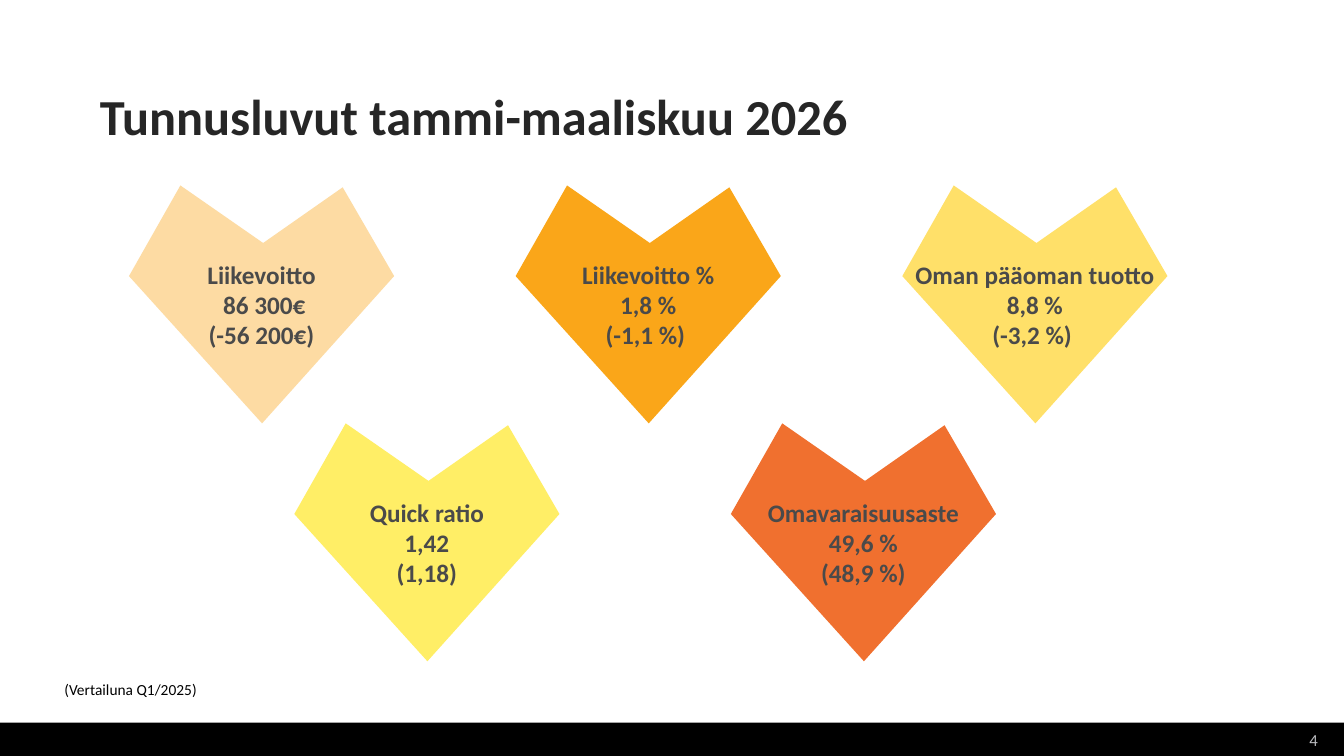
from dataclasses import dataclass

from pptx import Presentation
from pptx import util as u
from pptx.dml.color import RGBColor
from pptx.enum import shapes, text


@dataclass(frozen=True)
class Theme:
    font: str = "Calibri"
    heading: str = "262626"
    figure: str = "4A4A4A"
    note: str = "000000"
    number: str = "BCBDC0"
    bar: str = "000000"
    peach: str = "FDDBA3"
    orange: str = "FAA619"
    gold: str = "FFE069"
    yellow: str = "FFEE66"
    red: str = "F0702F"
    heading_size: int = 36
    figure_size: int = 18
    number_size: int = 12
    note_size: int = 11


# Heart corners, in percent of the heart's width and height
HEART = [(19.4, 0), (0, 38.1), (50.2, 100), (100, 38.1), (80.6, 0.8), (50.6, 24.2)]
HEART_W, HEART_H = 19.73, 31.47


class KeyFigureSlide:
    """Places elements by percent of the slide's width and height."""

    def __init__(self, deck, theme):
        self.theme = theme
        self.width, self.height = deck.slide_width, deck.slide_height
        self.slide = deck.slides.add_slide(deck.slide_layouts[5])

    def x(self, share):
        return round(self.width * share / 100)

    def y(self, share):
        return round(self.height * share / 100)

    def box(self, left, top, width, height):
        return self.x(left), self.y(top), self.x(width), self.y(height)

    def paint(self, shape, color):
        shape.shadow.inherit = False
        shape.fill.solid()
        shape.fill.fore_color.rgb = RGBColor.from_string(color)
        shape.line.fill.background()

    def set_words(self, shape, words, size, color, bold=False,
                  align=text.PP_ALIGN.LEFT, anchor=text.MSO_ANCHOR.MIDDLE, wrap=True):
        frame = shape.text_frame
        frame.text = words
        frame.word_wrap = wrap
        frame.vertical_anchor = anchor
        for paragraph in frame.paragraphs:
            paragraph.alignment = align
            for run in paragraph.runs:
                run.font.name = self.theme.font
                run.font.size = u.Pt(size)
                run.font.bold = bold
                run.font.color.rgb = RGBColor.from_string(color)
        return frame

    def title(self, words, *place):
        heading = self.slide.shapes.title
        heading.left, heading.top, heading.width, heading.height = self.box(*place)
        frame = self.set_words(heading, words, self.theme.heading_size, self.theme.heading,
                               bold=True, anchor=text.MSO_ANCHOR.BOTTOM)
        frame.auto_size = text.MSO_AUTO_SIZE.NONE
        frame.margin_left = frame.margin_right = u.Inches(0.07)
        frame.margin_top = frame.margin_bottom = u.Inches(0.04)
        frame.paragraphs[0].line_spacing = 0.9

    def bar(self, *place):
        footer = self.slide.shapes.add_shape(shapes.MSO_SHAPE.RECTANGLE, *self.box(*place))
        self.paint(footer, self.theme.bar)

    def label(self, words, size, color, *place, **style):
        caption = self.slide.shapes.add_textbox(*self.box(*place))
        return self.set_words(caption, words, size, color, **style)

    def heart(self, left, top, color, lines):
        corners = [(self.x(left + HEART_W * across / 100), self.y(top + HEART_H * down / 100))
                   for across, down in HEART]
        outline = self.slide.shapes.build_freeform(*corners[0])
        outline.add_line_segments(corners[1:], close=True)
        heart = outline.convert_to_shape()
        self.paint(heart, color)
        self.set_words(heart, "\n".join(lines), self.theme.figure_size, self.theme.figure,
                       bold=True, align=text.PP_ALIGN.CENTER)


def main():
    deck = Presentation()
    deck.slide_width, deck.slide_height = u.Inches(13.33), u.Inches(7.5)
    theme = Theme()
    page = KeyFigureSlide(deck, theme)

    # Footer bar and heading
    page.bar(0, 95.6, 100, 4.4)
    page.title("Tunnusluvut tammi-maaliskuu 2026", 6.9, 5.33, 71.2, 14.53)

    # Key figures: first left edge, step between hearts, hearts
    first_top = 24.53
    rows = [
        (9.6, 28.77, [
            (theme.peach, ["Liikevoitto", " 86 300€", "(-56 200€)"]),
            (theme.orange, ["Liikevoitto %", "1,8 %", "(-1,1 %) "]),
            (theme.gold, ["Oman pääoman tuotto", "8,8 %", "(-3,2 %) "]),
        ]),
        (21.9, 32.48, [
            (theme.yellow, ["Quick ratio", "1,42", "(1,18)"]),
            (theme.red, ["Omavaraisuusaste", "49,6 %", "(48,9 %)"]),
        ]),
    ]
    for row, (left, step, hearts) in enumerate(rows):
        for column, (color, lines) in enumerate(hearts):
            page.heart(left + column * step, first_top + row * HEART_H, color, lines)

    # Comparison note and page number
    note = page.label("(Vertailuna Q1/2025)", theme.note_size, theme.note,
                      4.05, 89.33, 11.55, 3.87, anchor=text.MSO_ANCHOR.TOP, wrap=False)
    note.auto_size = text.MSO_AUTO_SIZE.SHAPE_TO_FIT_TEXT
    page.label("4", theme.number_size, theme.number, 76.3, 95.2, 22.5, 5.33,
               align=text.PP_ALIGN.RIGHT)

    deck.save("out.pptx")


if __name__ == "__main__":
    main()
